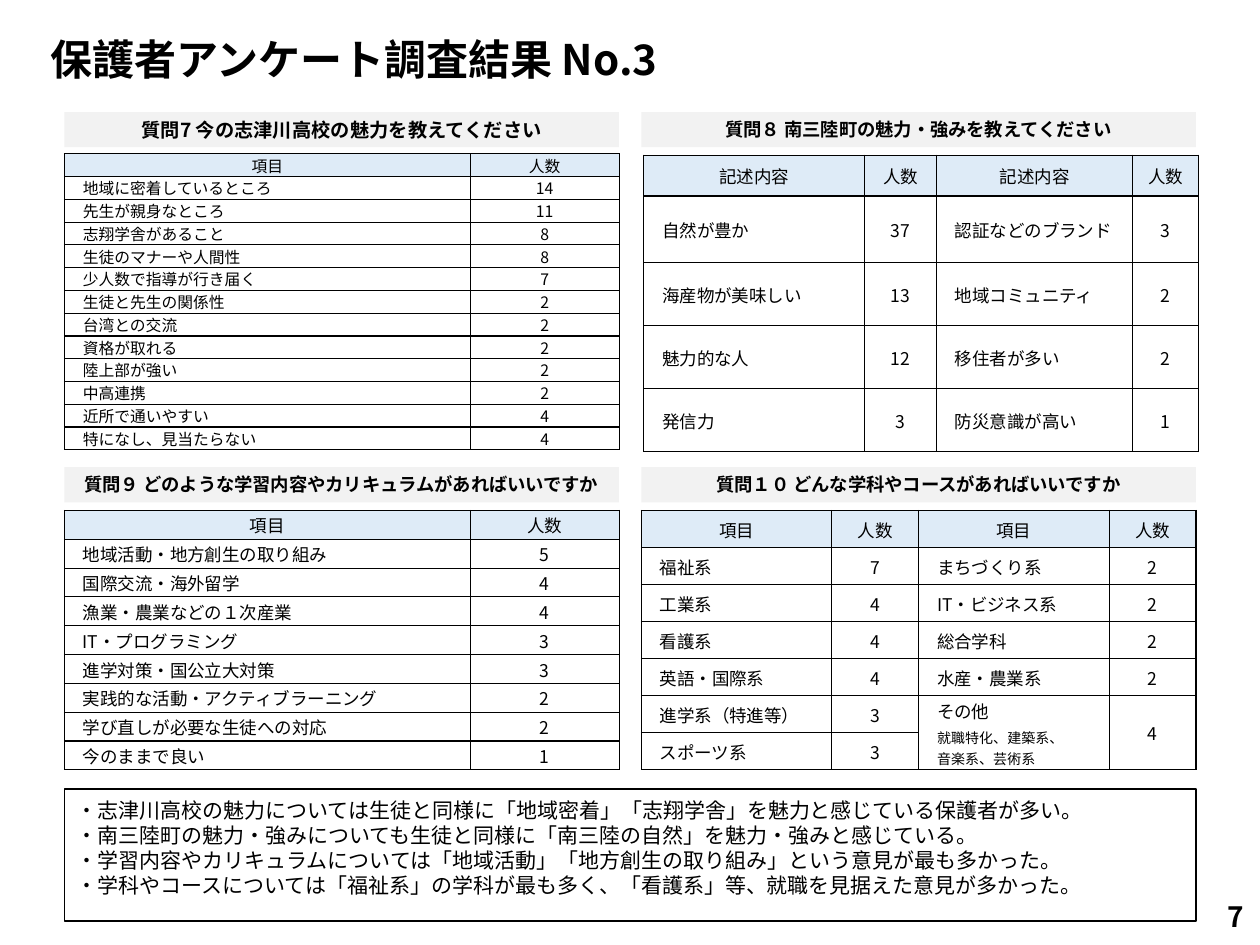
from lxml import etree
from pptx import Presentation
from pptx.dml.color import RGBColor
from pptx.enum.shapes import MSO_SHAPE
from pptx.enum.text import MSO_ANCHOR, PP_ALIGN
from pptx.oxml.ns import qn
from pptx.util import Cm, Pt

FONT = "Noto Sans CJK JP"
BLACK = RGBColor(0x00, 0x00, 0x00)
WHITE = RGBColor(0xFF, 0xFF, 0xFF)
HEADING_GRAY = RGBColor(0xF2, 0xF2, 0xF2)
HEADER_BLUE = RGBColor(0xDE, 0xEB, 0xF7)
LEFT, CENTER, RIGHT = PP_ALIGN.LEFT, PP_ALIGN.CENTER, PP_ALIGN.RIGHT
TOP, MIDDLE = MSO_ANCHOR.TOP, MSO_ANCHOR.MIDDLE
RECTANGLE = MSO_SHAPE.RECTANGLE

LEFT_X, RIGHT_X, COLUMN_WIDTH = 1.3, 12.93, 11.18
HEADING_HEIGHT = 0.71

SCHOOL_APPEAL = [
    ("項目", "人数"),
    ("地域に密着しているところ", "14"),
    ("先生が親身なところ", "11"),
    ("志翔学舎があること", "8"),
    ("生徒のマナーや人間性", "8"),
    ("少人数で指導が行き届く", "7"),
    ("生徒と先生の関係性", "2"),
    ("台湾との交流", "2"),
    ("資格が取れる", "2"),
    ("陸上部が強い", "2"),
    ("中高連携", "2"),
    ("近所で通いやすい", "4"),
    ("特になし、見当たらない", "4"),
]
TOWN_APPEAL = [
    ("記述内容", "人数", "記述内容", "人数"),
    ("自然が豊か", "37", "認証などのブランド", "3"),
    ("海産物が美味しい", "13", "地域コミュニティ", "2"),
    ("魅力的な人", "12", "移住者が多い", "2"),
    ("発信力", "3", "防災意識が高い", "1"),
]
CURRICULUM = [
    ("項目", "人数"),
    ("地域活動・地方創生の取り組み", "5"),
    ("国際交流・海外留学", "4"),
    ("漁業・農業などの１次産業", "4"),
    ("IT・プログラミング", "3"),
    ("進学対策・国公立大対策", "3"),
    ("実践的な活動・アクティブラーニング", "2"),
    ("学び直しが必要な生徒への対応", "2"),
    ("今のままで良い", "1"),
]
COURSES = [
    ("項目", "人数", "項目", "人数"),
    ("福祉系", "7", "まちづくり系", "2"),
    ("工業系", "4", "IT・ビジネス系", "2"),
    ("看護系", "4", "総合学科", "2"),
    ("英語・国際系", "4", "水産・農業系", "2"),
    ("進学系（特進等）", "3", "その他", "4"),
    ("スポーツ系", "3", None, None),
]
OTHER_COURSES = ["就職特化、建築系、", "音楽系、芸術系"]
SUMMARY = [
    "・志津川高校の魅力については生徒と同様に「地域密着」「志翔学舎」を魅力と感じている保護者が多い。",
    "・南三陸町の魅力・強みについても生徒と同様に「南三陸の自然」を魅力・強みと感じている。",
    "・学習内容やカリキュラムについては「地域活動」「地方創生の取り組み」という意見が最も多かった。",
    "・学科やコースについては「福祉系」の学科が最も多く、「看護系」等、就職を見据えた意見が多かった。",
]


def add_run(paragraph, text, size, bold=False, alignment=LEFT):
    """Add one run in the slide font to a paragraph."""
    paragraph.alignment = alignment
    run = paragraph.add_run()
    run.text = text
    run.font.name = FONT
    run.font.size = Pt(size)
    run.font.bold = bold
    run.font.color.rgb = BLACK
    etree.SubElement(run.font._element, qn("a:ea"), typeface=FONT)


def add_text_box(slide, box, lines, size, bold=False, alignment=LEFT, anchor=TOP):
    """Add a wrapped text box with one paragraph for each line."""
    frame = slide.shapes.add_textbox(*map(Cm, box)).text_frame
    frame.word_wrap = True
    frame.vertical_anchor = anchor
    for index, line in enumerate(lines):
        paragraph = frame.add_paragraph() if index else frame.paragraphs[0]
        add_run(paragraph, line, size, bold, alignment)


def add_rectangle(slide, box):
    """Add a plain rectangle without fill, line or shadow."""
    shape = slide.shapes.add_shape(RECTANGLE, *map(Cm, box))
    shape.shadow.inherit = False
    shape.fill.background()
    shape.line.fill.background()
    return shape


def add_heading(slide, box, text, size):
    """Add a gray question heading."""
    shape = add_rectangle(slide, box)
    shape.fill.solid()
    shape.fill.fore_color.rgb = HEADING_GRAY
    shape.text_frame.word_wrap = True
    shape.text_frame.vertical_anchor = TOP
    add_run(shape.text_frame.paragraphs[0], text, size, True, CENTER)


def style_cell(cell, fill_color, is_label, top_margin):
    """Give a cell its borders, fill and margins."""
    properties = cell._tc.get_or_add_tcPr()
    for side in ("a:lnL", "a:lnR", "a:lnT", "a:lnB"):
        line = etree.SubElement(properties, qn(side), w=str(Pt(0.75)))
        fill = etree.SubElement(line, qn("a:solidFill"))
        etree.SubElement(fill, qn("a:srgbClr"), val=str(BLACK))
    cell.fill.solid()
    cell.fill.fore_color.rgb = fill_color
    cell.vertical_anchor = MIDDLE
    cell.margin_left = Cm(0.37 if is_label else 0.02)
    cell.margin_right = Cm(0.02)
    cell.margin_top = Cm(top_margin)
    cell.margin_bottom = 0


def add_answer_table(slide, box, rows, widths, heights, size, top_margin=0.02):
    """Add a table of answers and counts; None joins a cell to the one above."""
    shape = slide.shapes.add_table(len(rows), len(widths), *map(Cm, box))
    table = shape.table
    table.first_row = table.horz_banding = False
    for column, width in zip(table.columns, widths):
        column.width = Cm(width)
    for row, height in zip(table.rows, heights):
        row.height = Cm(height)
    for row_index, values in enumerate(rows):
        for column_index, value in enumerate(values):
            cell = table.cell(row_index, column_index)
            is_header = row_index == 0
            is_label = not is_header and column_index % 2 == 0
            style_cell(cell, HEADER_BLUE if is_header else WHITE, is_label, top_margin)
            if value is None:
                table.cell(row_index - 1, column_index).merge(cell)
            else:
                alignment = LEFT if is_label else CENTER
                add_run(cell.text_frame.paragraphs[0], value, size, False, alignment)
    return table


def add_other_courses(cell):
    """List the minor courses in small type under the cell's label."""
    for index, line in enumerate(OTHER_COURSES):
        paragraph = cell.text_frame.add_paragraph()
        paragraph.space_before = Pt(0 if index else 2)
        add_run(paragraph, line, 8)


def add_summary(slide, left, top, width, height):
    """Add the framed summary of the findings."""
    frame = add_rectangle(slide, (left, top, width, height))
    frame.line.color.rgb = BLACK
    frame.line.width = Pt(1)
    add_text_box(slide, (left, top + 0.05, width, 2.31), SUMMARY, 12)


def build_survey_slide(slide):
    """Place the title, the four questions and the summary."""
    add_text_box(slide, (0.76, 0.56, 24.64, 1.27), ["保護者アンケート調査結果 No.3"], 24, True)
    add_text_box(slide, (19.61, 17.96, 5.72, 1.02), ["7"], 16, True, RIGHT, MIDDLE)
    headings = [
        (LEFT_X, 2.26, "質問7 今の志津川高校の魅力を教えてください", 11),
        (RIGHT_X, 2.26, "質問８ 南三陸町の魅力・強みを教えてください", 10.5),
        (LEFT_X, 9.42, "質問９ どのような学習内容やカリキュラムがあればいいですか", 10.5),
        (RIGHT_X, 9.42, "質問１０ どんな学科やコースがあればいいですか", 10.5),
    ]
    for left, top, text, size in headings:
        add_heading(slide, (left, top, COLUMN_WIDTH, HEADING_HEIGHT), text, size)
    pair_widths = [8.18, 3]
    add_answer_table(slide, (LEFT_X, 3.1, COLUMN_WIDTH, 5.97), SCHOOL_APPEAL,
                     pair_widths, [5.97 / 13] * 13, 9, 0)
    add_answer_table(slide, (RIGHT_X + 0.05, 3.13, COLUMN_WIDTH, 5.97), TOWN_APPEAL,
                     [4.45, 1.45, 3.95, 1.33], [0.82, 1.35, 1.27, 1.27, 1.27], 10)
    add_answer_table(slide, (LEFT_X, 10.29, COLUMN_WIDTH, 5.23), CURRICULUM,
                     pair_widths, [5.23 / 9] * 9, 10)
    courses = add_answer_table(slide, (RIGHT_X, 10.29, COLUMN_WIDTH, 5.23), COURSES,
                               [3.84, 1.75] * 2, [5.23 / 7] * 7, 10)
    add_other_courses(courses.cell(5, 2))
    add_summary(slide, LEFT_X, 15.9, 22.81, 2.67)


def main():
    """Build and save the presentation."""
    presentation = Presentation()
    presentation.slide_width = Cm(25.4)
    presentation.slide_height = Cm(19.05)
    build_survey_slide(presentation.slides.add_slide(presentation.slide_layouts[6]))
    presentation.save("out.pptx")


if __name__ == "__main__":
    main()
